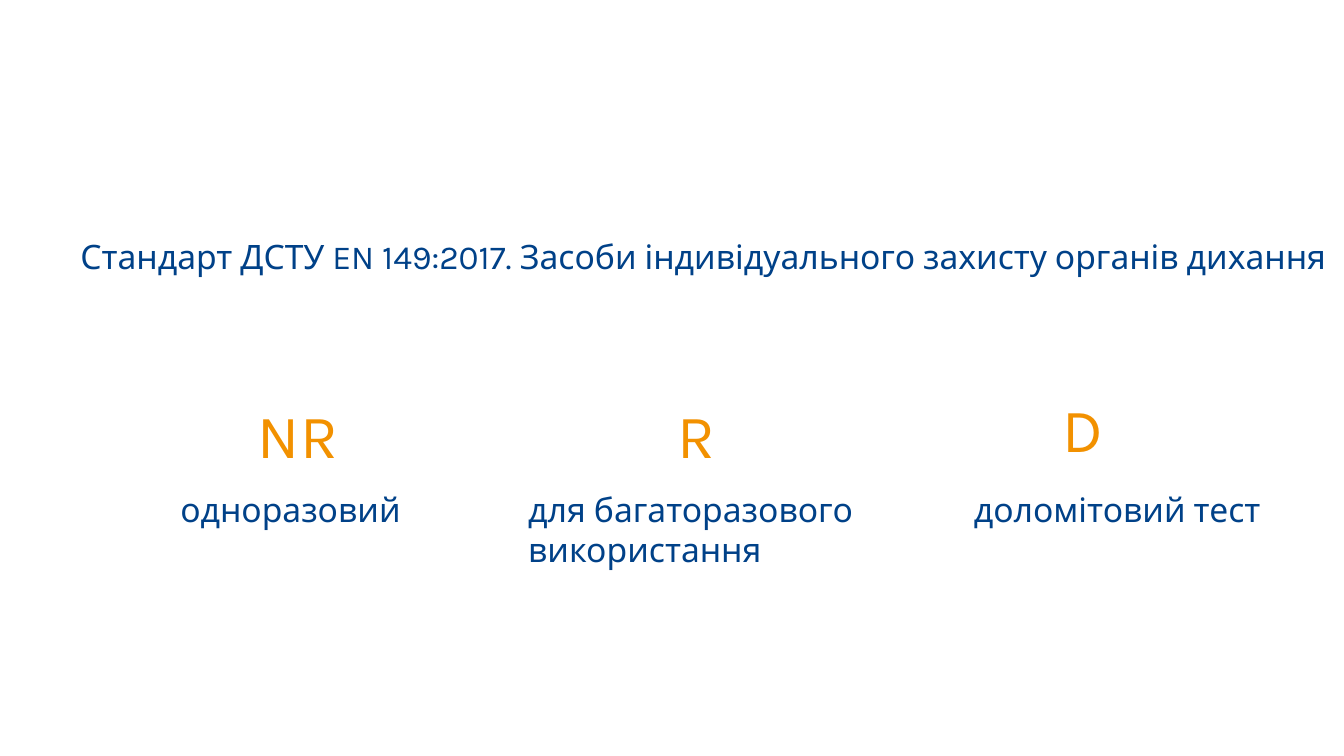
from pptx import Presentation
from pptx.dml.color import RGBColor
from pptx.enum.shapes import MSO_SHAPE
from pptx.enum.text import MSO_ANCHOR, MSO_AUTO_SIZE, PP_ALIGN
from pptx.util import Inches, Pt

BLUE = RGBColor(0x00, 0x41, 0x88)
ORANGE = RGBColor(0xF2, 0x91, 0x00)
ROUNDED = MSO_SHAPE.ROUNDED_RECTANGLE
BOTTOM = MSO_ANCHOR.BOTTOM
GROW = MSO_AUTO_SIZE.SHAPE_TO_FIT_TEXT
CENTER = PP_ALIGN.CENTER

TITLE = "Стандарт ДСТУ EN 149:2017. Засоби індивідуального захисту органів дихання"
MARKINGS = [
    ("NR", (2.32, 3.75, 1.27, 1.05), "одноразовий", (1.69, 4.8, 2.53, 0.5), False),
    ("R", (6.27, 3.75, 1.27, 1.05), "для багаторазового використання",
     (5.14, 4.8, 3.77, 0.91), True),
    ("D", (10.22, 3.75, 1.04, 0.98), "доломітовий тест", (9.56, 4.8, 3.77, 0.5), True),
]


def apply_format(target, values):
    for name, value in values.items():
        setattr(target, name, value)


def write_text(box, text, size, color, frame_format, para_format):
    apply_format(box.text_frame, frame_format)
    para = box.text_frame.paragraphs[0]
    apply_format(para, para_format)
    span = para.add_run()
    span.text = text
    apply_format(span.font, {"name": "Karla", "size": Pt(size)})
    span.font.color.rgb = color


def add_label(page, text, place, frame_format, para_format):
    box = page.shapes.add_textbox(*map(Inches, place))
    write_text(box, text, 24, BLUE, frame_format, para_format)


def add_marking(page, text, place):
    box = page.shapes.add_shape(ROUNDED, *map(Inches, place))
    box.adjustments[0] = 0.22
    box.shadow.inherit = False
    box.fill.background()
    box.line.fill.background()
    write_text(box, text, 44, ORANGE, {"word_wrap": True, "vertical_anchor": BOTTOM},
               {"alignment": CENTER, "line_spacing": 0.9})


def main():
    deck = Presentation()
    apply_format(deck, {"slide_width": Inches(13.33), "slide_height": Inches(7.5)})
    page = deck.slides.add_slide(deck.slide_layouts[6])
    add_label(page, TITLE, (0.7, 2.34, 12.63, 0.4), {"word_wrap": True},
              {"line_spacing": 0.9})
    for code, code_place, meaning, meaning_place, wraps in MARKINGS:
        add_marking(page, code, code_place)
        add_label(page, meaning, meaning_place,
                  {"word_wrap": wraps, "auto_size": GROW}, {})
    deck.save("out.pptx")


if __name__ == "__main__":
    main()
